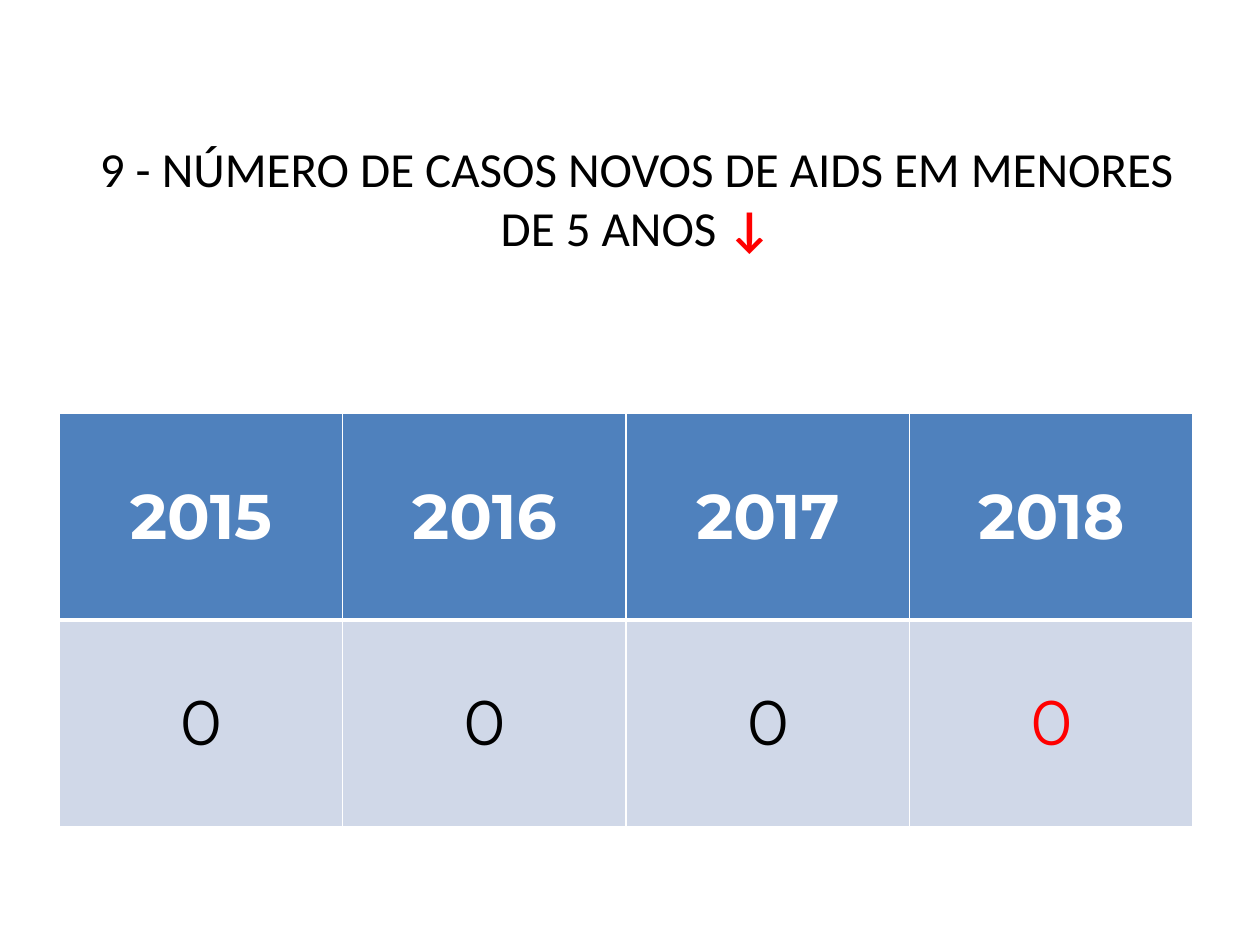
from dataclasses import dataclass

from lxml.etree import SubElement
from pptx import Presentation
from pptx.dml.color import RGBColor as RGB
from pptx.enum.text import MSO_ANCHOR as Anchor, PP_ALIGN as Align
from pptx.oxml.ns import qn
from pptx.util import Inches, Pt


@dataclass(frozen=True)
class Theme:
    white: str = "FFFFFF"
    black: str = "000000"
    red: str = "FF0000"
    head: str = "4F81BD"
    body: str = "D0D8E8"
    title_font: str = "Calibri"
    table_font: str = "Montserrat"
    title_size: int = 28
    table_size: int = 36


def write(para, text, *, font, size, color, bold=False):
    para.alignment = Align.CENTER
    run = para.add_run()
    run.text = text
    run.font.name = font
    run.font.size = Pt(size)
    run.font.bold = bold
    run.font.color.rgb = RGB.from_string(color)


def border(cell, color, **widths):
    """Draw cell sides, given as L, R, T, B widths in points; call before the fill."""
    props = cell._tc.get_or_add_tcPr()
    for side, width in widths.items():
        line = SubElement(props, qn(f"a:ln{side}"), w=str(Pt(width)))
        fill = SubElement(line, qn("a:solidFill"))
        SubElement(fill, qn("a:srgbClr"), val=color)


class Page:
    def __init__(self, theme, slide):
        self.theme = theme
        self.slide = slide

    def title(self, box, parts):
        """Write (text, color, bold) parts as one centred line of thought."""
        theme = self.theme
        frame = self.slide.shapes.add_textbox(*map(Inches, box)).text_frame
        frame.word_wrap = True
        frame.vertical_anchor = Anchor.MIDDLE
        for text, color, bold in parts:
            write(frame.paragraphs[0], text, font=theme.title_font,
                  size=theme.title_size, color=color, bold=bold)

    def table(self, box, data):
        """Lay out a header row and value rows; the last value is in red."""
        theme = self.theme
        rows, cols = len(data), len(data[0])
        grid = self.slide.shapes.add_table(rows, cols, *map(Inches, box)).table
        for r, values in enumerate(data):
            head = r == 0
            for c, text in enumerate(values):
                last = c == cols - 1
                cell = grid.cell(r, c)
                cell.vertical_anchor = Anchor.MIDDLE
                border(cell, theme.white, L=1, R=1,
                       T=1 if head else 3, B=3 if head else 1)
                cell.fill.solid()
                cell.fill.fore_color.rgb = RGB.from_string(
                    theme.head if head else theme.body)
                ink = theme.white if head else theme.red if last else theme.black
                write(cell.text_frame.paragraphs[0], text, font=theme.table_font,
                      size=theme.table_size, color=ink, bold=head)


def main():
    deck = Presentation()
    deck.slide_width, deck.slide_height = Inches(10), Inches(7.5)
    theme = Theme()
    page = Page(theme, deck.slides.add_slide(deck.slide_layouts[6]))
    page.title((0.55, 0.16, 9, 2.81), [
        ("9 - NÚMERO DE CASOS NOVOS DE AIDS EM MENORES DE 5 ANOS ",
         theme.black, False),
        ("↓", theme.red, True),
    ])
    years = [str(year) for year in range(2015, 2019)]
    page.table((0.47, 3.28, 9, 3.28), [years, ["0"] * len(years)])
    deck.save("out.pptx")


if __name__ == "__main__":
    main()
